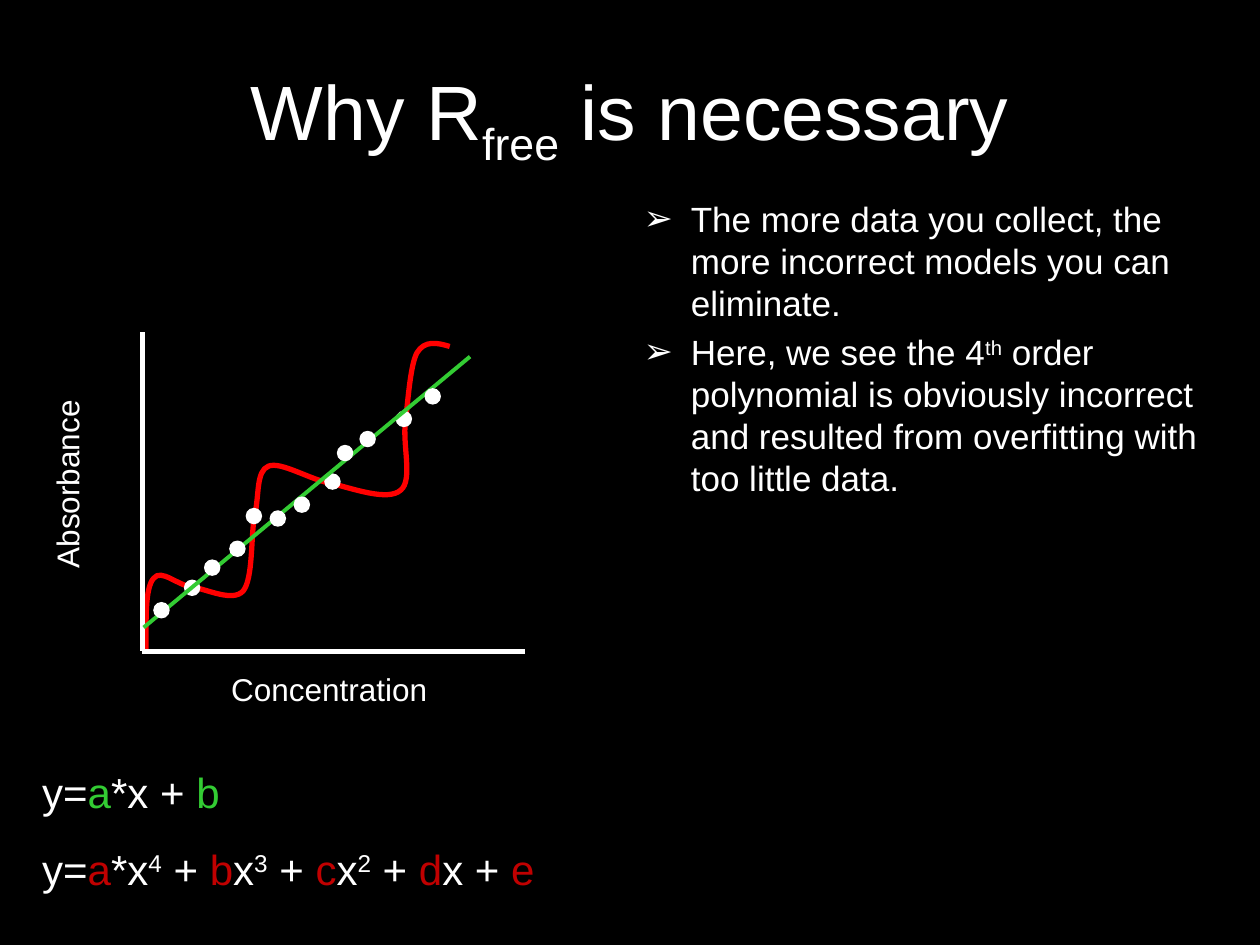
from typing import NamedTuple

from lxml.etree import SubElement
from pptx import Presentation
from pptx.dml.color import RGBColor
from pptx.enum.shapes import MSO_CONNECTOR, MSO_SHAPE
from pptx.enum.text import MSO_ANCHOR, MSO_AUTO_SIZE, PP_ALIGN
from pptx.oxml.ns import qn
from pptx.util import Pt

BLACK = RGBColor(0x00, 0x00, 0x00)
WHITE = RGBColor(0xFF, 0xFF, 0xFF)
RED = RGBColor(0xFF, 0x00, 0x00)
DARK_RED = RGBColor(0xC0, 0x00, 0x00)
GREEN = RGBColor(0x33, 0xCC, 0x33)
FONT = "Arial"
DOT_SIZE = 9.4
SUPERSCRIPT = 30
SUBSCRIPT = -25


class Span(NamedTuple):
    text: str
    color: RGBColor = WHITE
    baseline: int = 0


class Box(NamedTuple):
    left: float
    top: float
    width: float
    height: float


class Line(NamedTuple):
    start: tuple[float, float]
    end: tuple[float, float]
    color: RGBColor
    width: float


AXES = [
    Line((81.4, 190), (81.4, 372.2), WHITE, 3),
    Line((81.4, 372.2), (300.2, 372.2), WHITE, 3),
]
LINEAR_FIT = Line((82.1, 358.6), (268.6, 203.8), GREEN, 2.25)

# Left and top of each data point
FIRST_DOTS = [(105.1, 331.2), (140.4, 290.2), (185.3, 270.5), (226.1, 234.7)]
ADDED_DOTS = [
    (131, 308.9), (116.6, 319.7), (154.1, 291.6), (167.8, 283.7),
    (192.5, 254.2), (205.4, 246.2), (242.6, 221.8), (87.6, 344),
]

# Start point, then two control points and an end point per Bezier segment
OVERFIT_CURVE = [
    (83.5, 371.5),
    (83.5, 353.5), (82.8, 336.2), (87.8, 330.5),
    (92.2, 324.7), (101.5, 334.8), (110.2, 335.5),
    (118.8, 337), (133.2, 344.2), (139, 337.7),
    (144.7, 330.5), (143.3, 306.7), (145.4, 295.2),
    (148.3, 283), (146.2, 269.3), (153.4, 266.4),
    (160.6, 263.5), (177.1, 274.3), (190.1, 276.5),
    (202.3, 279.4), (221.8, 286.6), (229, 280.1),
    (236.2, 274.3), (229.7, 253.4), (231.8, 240.5),
    (233.3, 226.8), (234.7, 208.1), (238.3, 201.6),
    (242.6, 194.4), (249.8, 195.8), (257, 198),
]

TITLE = [Span("Why R"), Span("free", baseline=SUBSCRIPT), Span(" is necessary")]
BULLETS = [
    [Span("The more data you collect, the more incorrect models you can eliminate.")],
    [
        Span("Here, we see the 4"),
        Span("th", baseline=SUPERSCRIPT),
        Span(" order polynomial is obviously incorrect and resulted from "
             "overfitting with too little data."),
    ],
]
LINEAR_EQUATION = [Span("y="), Span("a", GREEN), Span("*x + "), Span("b", GREEN)]
QUARTIC_EQUATION = [
    Span("y="), Span("a", DARK_RED), Span("*x"), Span("4", baseline=SUPERSCRIPT),
    Span(" + "), Span("b", DARK_RED), Span("x"), Span("3", baseline=SUPERSCRIPT),
    Span(" + "), Span("c", DARK_RED), Span("x"), Span("2", baseline=SUPERSCRIPT),
    Span(" + "), Span("d", DARK_RED), Span("x + "), Span("e", DARK_RED),
]


def add_spans(paragraph, spans: list[Span], size: float) -> None:
    for span in spans:
        run = paragraph.add_run()
        run.text = span.text
        run.font.name = FONT
        run.font.size = Pt(size)
        run.font.color.rgb = span.color
        if span.baseline:
            run.font._element.set("baseline", str(span.baseline * 1000))


def place(shape, box: Box) -> None:
    shape.left, shape.top, shape.width, shape.height = map(Pt, box)


def add_label(slide, box: Box, spans: list[Span], size: float,
              vertical: bool = False) -> None:
    shape = slide.shapes.add_textbox(*map(Pt, box))
    frame = shape.text_frame
    frame.word_wrap = False
    frame.auto_size = MSO_AUTO_SIZE.SHAPE_TO_FIT_TEXT
    if vertical:
        frame._txBody.bodyPr.set("vert", "vert270")
    add_spans(frame.paragraphs[0], spans, size)


def add_bullets(slide, box: Box) -> None:
    frame = slide.shapes.add_textbox(*map(Pt, box)).text_frame
    frame.word_wrap = True
    for index, spans in enumerate(BULLETS):
        paragraph = frame.add_paragraph() if index else frame.paragraphs[0]
        properties = paragraph._p.get_or_add_pPr()
        properties.set("marL", str(Pt(27)))
        properties.set("indent", str(-Pt(27)))
        SubElement(properties, qn("a:buFont"), typeface=FONT)
        SubElement(properties, qn("a:buChar"), char="➢")
        if index:
            paragraph.space_before = Pt(4)
        add_spans(paragraph, spans, 20)


def add_line(slide, line: Line) -> None:
    connector = slide.shapes.add_connector(
        MSO_CONNECTOR.STRAIGHT, *map(Pt, line.start + line.end))
    connector.line.color.rgb = line.color
    connector.line.width = Pt(line.width)
    SubElement(connector._element.spPr, qn("a:effectLst"))


def add_dots(slide, positions: list[tuple[float, float]]) -> None:
    for left, top in positions:
        dot = slide.shapes.add_shape(
            MSO_SHAPE.OVAL, Pt(left), Pt(top), Pt(DOT_SIZE), Pt(DOT_SIZE))
        dot.shadow.inherit = False
        dot.fill.solid()
        dot.fill.fore_color.rgb = WHITE
        dot.line.fill.background()


def add_curve(slide, points: list[tuple[float, float]]) -> None:
    """Draw a polyline through the points, then join every three as a Bezier."""
    vertices = [(Pt(x), Pt(y)) for x, y in points]
    builder = slide.shapes.build_freeform(*vertices[0])
    builder.add_line_segments(vertices[1:], close=False)
    shape = builder.convert_to_shape()
    segments = list(shape._element.iter(qn("a:lnTo")))
    outline = segments[0].getparent()
    for index in range(0, len(segments), 3):
        bezier = SubElement(outline, qn("a:cubicBezTo"))
        for segment in segments[index:index + 3]:
            bezier.append(segment[0])
            outline.remove(segment)
    shape.shadow.inherit = False
    shape.fill.background()
    shape.line.color.rgb = RED
    shape.line.width = Pt(3)


def main() -> None:
    presentation = Presentation()
    presentation.slide_width, presentation.slide_height = Pt(720), Pt(540)
    slide = presentation.slides.add_slide(presentation.slide_layouts[5])
    slide.background.fill.solid()
    slide.background.fill.fore_color.rgb = BLACK

    title = slide.shapes.title
    place(title, Box(36, 21.6, 648, 90))
    title.text_frame.vertical_anchor = MSO_ANCHOR.MIDDLE
    title.text_frame.paragraphs[0].alignment = PP_ALIGN.CENTER
    add_spans(title.text_frame.paragraphs[0], TITLE, 44)

    add_curve(slide, OVERFIT_CURVE)
    add_bullets(slide, Box(360.7, 109.4, 340.6, 386))
    for axis in AXES:
        add_line(slide, axis)
    add_dots(slide, FIRST_DOTS)
    add_label(slide, Box(23.8, 227.5, 36, 104.4), [Span("Absorbance")], 18, vertical=True)
    add_label(slide, Box(125, 379.4, 130, 36), [Span("Concentration")], 18)
    add_line(slide, LINEAR_FIT)
    add_label(slide, Box(17, 434.5, 116.6, 36), LINEAR_EQUATION, 24)
    add_label(slide, Box(17, 478.4, 301.7, 36), QUARTIC_EQUATION, 24)
    add_dots(slide, ADDED_DOTS)

    presentation.save("out.pptx")


if __name__ == "__main__":
    main()
